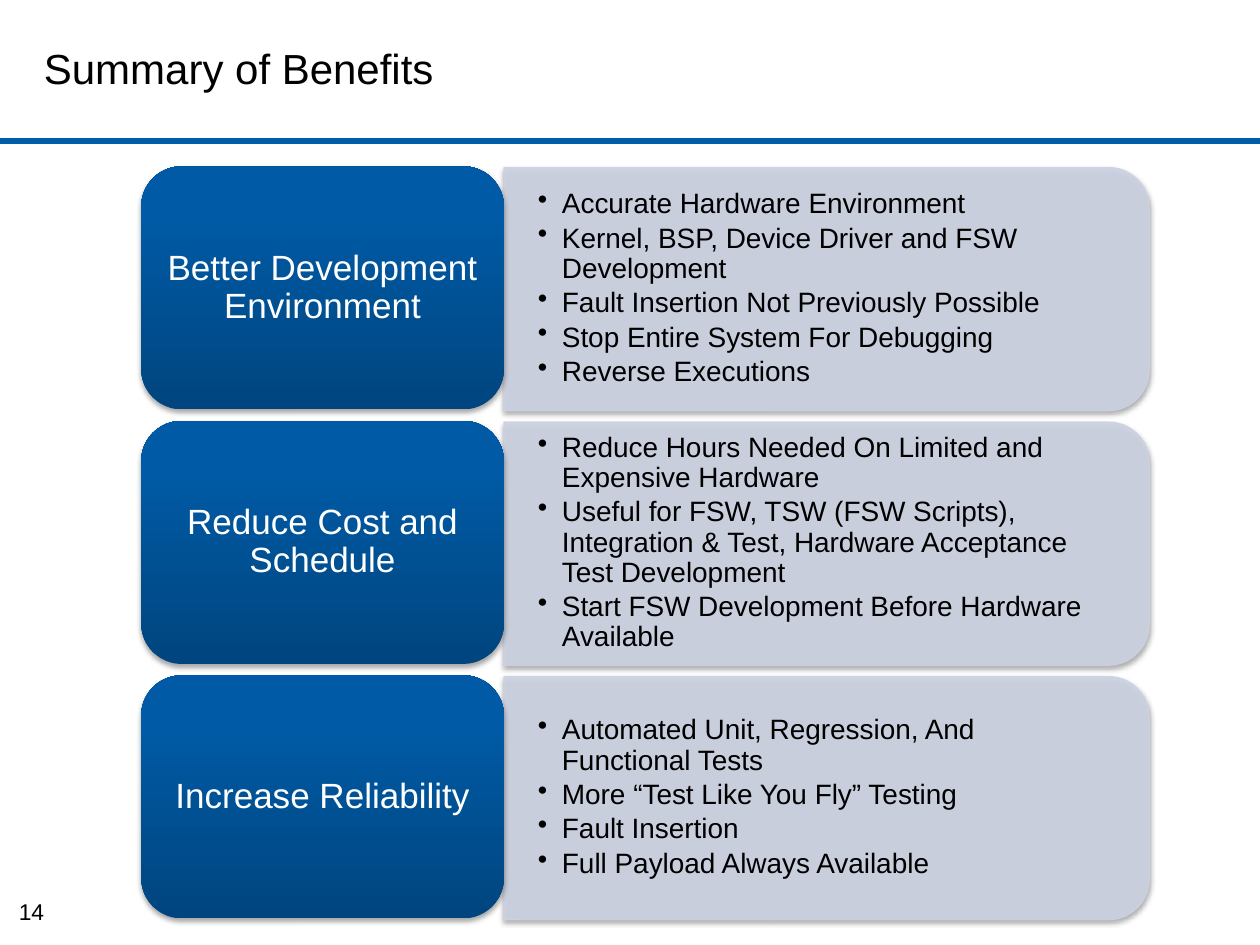
from typing import NamedTuple

import pptx
import pptx.dml.color
import pptx.enum.shapes
import pptx.enum.text
import pptx.oxml.ns
import pptx.util
from lxml import etree

Inches = pptx.util.Inches
Pt = pptx.util.Pt
qn = pptx.oxml.ns.qn
SHAPE = pptx.enum.shapes.MSO_SHAPE
ALIGN = pptx.enum.text.PP_ALIGN
ANCHOR = pptx.enum.text.MSO_ANCHOR

FONT = "Arial"
COLORS = {
    "rule": "005DAA",
    "panel": "CCD2E2",
    "label_dark": "00457F",
    "label_mid": "005AA5",
    "label_light": "005BA5",
    "black": "000000",
    "white": "FFFFFF",
}

# Layout of the benefit rows, in inches
ROW_TOP, ROW_PITCH, ROW_HEIGHT = 1.32, 2.02, 1.93
LABEL_LEFT, LABEL_WIDTH = 1.12, 2.88
PANEL_LEFT, PANEL_WIDTH = LABEL_LEFT + LABEL_WIDTH, 5.12
INDENT = 0.19


class Benefit(NamedTuple):
    label: str
    points: list[str]


BENEFITS = [
    Benefit("Better Development Environment", [
        "Accurate Hardware Environment",
        "Kernel, BSP, Device Driver and FSW Development",
        "Fault Insertion Not Previously Possible",
        "Stop Entire System For Debugging",
        "Reverse Executions",
    ]),
    Benefit("Reduce Cost and Schedule", [
        "Reduce Hours Needed On Limited and Expensive Hardware",
        "Useful for FSW, TSW (FSW Scripts), Integration & Test, "
        "Hardware Acceptance Test Development",
        "Start FSW Development Before Hardware Available",
    ]),
    Benefit("Increase Reliability", [
        "Automated Unit, Regression, And Functional Tests",
        "More “Test Like You Fly” Testing",
        "Fault Insertion",
        "Full Payload Always Available",
    ]),
]


def rgb(name: str) -> pptx.dml.color.RGBColor:
    return pptx.dml.color.RGBColor.from_string(COLORS[name])


def sub(parent, tag: str, **attrs):
    return etree.SubElement(parent, qn(tag), attrs)


def write_text(sp, lines: list[str], *, size: float, color: str = "black",
               align=ALIGN.LEFT, anchor=ANCHOR.MIDDLE, inset=(0.1, 0.05),
               spacing: float = 1.0, after: float = 0, bullets: bool = False,
               wrap: bool = True) -> None:
    """Fill a shape with one paragraph per line in a common format."""
    tf = sp.text_frame
    tf.word_wrap = wrap
    tf.vertical_anchor = anchor
    tf.margin_left = tf.margin_right = Inches(inset[0])
    tf.margin_top = tf.margin_bottom = Inches(inset[1])
    for i, line in enumerate(lines):
        p = tf.paragraphs[0] if i == 0 else tf.add_paragraph()
        p.alignment = align
        p.line_spacing = spacing
        p.space_after = Pt(after)
        if bullets:
            p.level = 1
            pPr = p._p.get_or_add_pPr()
            pPr.set("marL", str(Inches(INDENT)))
            pPr.set("indent", str(-Inches(INDENT)))
            sub(pPr, "a:buChar", char="•")
        r = p.add_run()
        r.text = line
        r.font.name = FONT
        r.font.size = Pt(size)
        r.font.color.rgb = rgb(color)


def add_shadow(sp) -> None:
    sp.shadow.inherit = False
    effects = sp._element.spPr.find(qn("a:effectLst"))
    shadow = sub(effects, "a:outerShdw", blurRad=str(Pt(3.1)), dist=str(Pt(1.8)),
                 dir="5400000", rotWithShape="0")
    sub(sub(shadow, "a:srgbClr", val=COLORS["black"]), "a:alpha", val="35000")


def add_textbox(slide, left: float, top: float, width: float, height: float):
    return slide.shapes.add_textbox(Inches(left), Inches(top),
                                    Inches(width), Inches(height))


def add_panel(slide, top: float, points: list[str]) -> None:
    # A quarter turn puts the rounded end on the right
    left = PANEL_LEFT + (PANEL_WIDTH - ROW_HEIGHT) / 2
    upright_top = top + 0.01 + (ROW_HEIGHT - PANEL_WIDTH) / 2
    sp = slide.shapes.add_shape(SHAPE.ROUND_2_SAME_RECTANGLE, Inches(left),
                                Inches(upright_top), Inches(ROW_HEIGHT),
                                Inches(PANEL_WIDTH))
    sp.rotation = 90
    sp.fill.solid()
    sp.fill.fore_color.rgb = rgb("panel")
    sp.line.color.rgb = rgb("panel")
    sp.line.width = Pt(0.75)
    for clr in sp._element.spPr.iter(qn("a:srgbClr")):
        sub(clr, "a:alpha", val="90000")
    add_shadow(sp)

    box = add_textbox(slide, PANEL_LEFT, top + 0.1, 5.03, 1.74)
    write_text(box, points, size=16, inset=(0.27, 0.14), spacing=0.9,
               after=2.4, bullets=True)


def add_label(slide, top: float, text: str) -> None:
    sp = slide.shapes.add_shape(SHAPE.ROUNDED_RECTANGLE, Inches(LABEL_LEFT),
                                Inches(top), Inches(LABEL_WIDTH), Inches(ROW_HEIGHT))
    sp.fill.gradient()
    sp.fill.gradient_angle = 90
    stops = sp._element.spPr.find(".//" + qn("a:gsLst"))
    stops.clear()
    for pos, name in ((0, "label_dark"), (80, "label_mid"), (100, "label_light")):
        sub(sub(stops, "a:gs", pos=str(pos * 1000)), "a:srgbClr", val=COLORS[name])
    sp.line.fill.background()
    add_shadow(sp)
    write_text(sp, [text], size=20, color="white", align=ALIGN.CENTER,
               inset=(0.08, 0.04), spacing=0.9, after=7)


def main() -> None:
    prs = pptx.Presentation()
    prs.slide_width, prs.slide_height = Inches(10), Inches(7.5)
    slide = prs.slides.add_slide(prs.slide_layouts[6])

    # Rule under the title
    rule = slide.shapes.add_connector(pptx.enum.shapes.MSO_CONNECTOR.STRAIGHT,
                                      0, Inches(1.12), Inches(10), Inches(1.12))
    rule.line.color.rgb = rgb("rule")
    rule.line.width = Pt(3.75)
    sub(rule._element.spPr, "a:effectLst")

    # Title and page number
    write_text(add_textbox(slide, 0.25, 0.08, 7.33, 0.92),
               ["Summary of Benefits"], size=24)
    write_text(add_textbox(slide, 0.03, 7.08, 0.44, 0.33), ["14"], size=13,
               align=ALIGN.CENTER, anchor=ANCHOR.TOP, inset=(0.11, 0.05), wrap=False)

    # Benefit rows
    for i, benefit in enumerate(BENEFITS):
        top = ROW_TOP + i * ROW_PITCH
        add_panel(slide, top, benefit.points)
        add_label(slide, top, benefit.label)

    prs.save("out.pptx")


if __name__ == "__main__":
    main()
